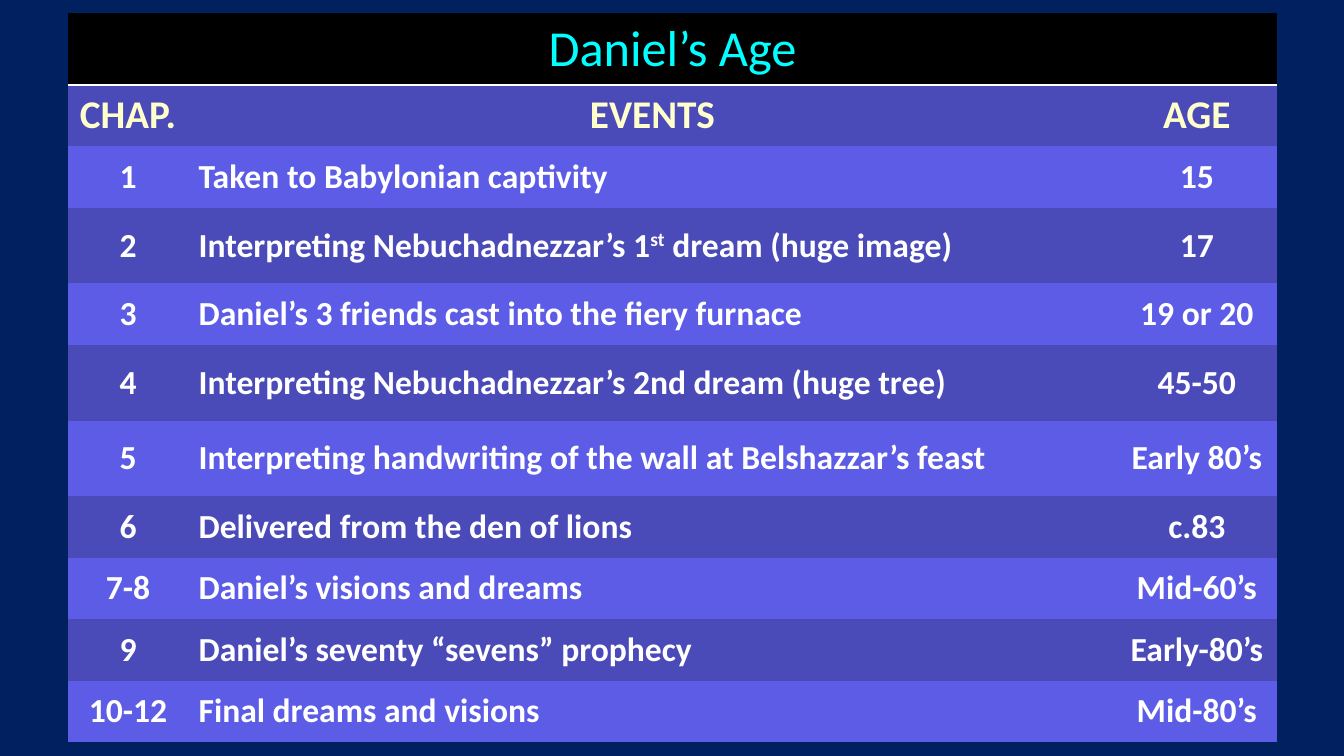
from pptx import Presentation
from pptx.dml.color import RGBColor as RGB
from pptx.enum.text import MSO_ANCHOR as ANCHOR, PP_ALIGN as ALIGN
from pptx.oxml import parse_xml
from pptx.oxml.ns import nsdecls
from pptx.util import Inches, Pt

COLORS = {
    "background": "002060", "title_fill": "000000", "title": "00FFFF",
    "dark": "4A4AB9", "light": "5C5CE7", "header": "FFFFCC", "white": "FFFFFF",
}
FONT = "Calibri"
NO_STYLE = "{2D5ABB26-0587-4C30-8999-92F81FD0307C}"
TITLE = "Daniel’s Age"
HEADER = ("CHAP.", "EVENTS", "AGE")
# An event is one string, or a tuple of runs whose odd items are superscript
EVENTS = [
    ("1", "Taken to Babylonian captivity", "15"),
    ("2", ("Interpreting Nebuchadnezzar’s 1", "st", " dream (huge image)"), "17"),
    ("3", "Daniel’s 3 friends cast into the fiery furnace", "19 or 20"),
    ("4", "Interpreting Nebuchadnezzar’s 2nd dream (huge tree)", "45-50"),
    ("5", "Interpreting handwriting of the wall at Belshazzar’s feast", "Early 80’s"),
    ("6", "Delivered from the den of lions", "c.83"),
    ("7-8", "Daniel’s visions and dreams", "Mid-60’s"),
    ("9", "Daniel’s seventy “sevens” prophecy", "Early-80’s"),
    ("10-12", "Final dreams and visions", "Mid-80’s"),
]
COL_WIDTHS = (1.2, 9.2, 1.6)
TITLE_HEIGHT, ROW_HEIGHT, TALL_HEIGHT = 0.68, 0.61, 0.75
TALL_CHAPTERS = ("2", "4", "5")


def fill_cell(cell, content, fill, color, size, bold=True, align=ALIGN.CENTER):
    cell.fill.solid()
    cell.fill.fore_color.rgb = RGB.from_string(COLORS[fill])
    cell.vertical_anchor = ANCHOR.MIDDLE
    p = cell.text_frame.paragraphs[0]
    p.alignment = align
    runs = (content,) if isinstance(content, str) else content
    for i, text in enumerate(runs):
        r = p.add_run()
        r.text = text
        r.font.name, r.font.size, r.font.bold = FONT, Pt(size), bold
        r.font.color.rgb = RGB.from_string(COLORS[color])
        if i % 2:
            r.font._element.set("baseline", "30000")


def underline_cell(cell, color, width):
    border = parse_xml(
        f'<a:lnB {nsdecls("a")} w="{Pt(width)}"><a:solidFill>'
        f'<a:srgbClr val="{COLORS[color]}"/></a:solidFill></a:lnB>')
    cell._tc.get_or_add_tcPr().insert(0, border)


def add_age_table(slide, left, top):
    heights = [TITLE_HEIGHT, ROW_HEIGHT] + [
        TALL_HEIGHT if chapter in TALL_CHAPTERS else ROW_HEIGHT
        for chapter, _, _ in EVENTS]
    table = slide.shapes.add_table(
        len(heights), len(COL_WIDTHS), Inches(left), Inches(top),
        Inches(sum(COL_WIDTHS)), Inches(sum(heights))).table
    table._tbl.tblPr[0].text = NO_STYLE
    for column, width in zip(table.columns, COL_WIDTHS):
        column.width = Inches(width)
    for row, height in zip(table.rows, heights):
        row.height = Inches(height)

    # Title across all columns
    title = table.cell(0, 0)
    title.merge(table.cell(0, len(COL_WIDTHS) - 1))
    fill_cell(title, TITLE, "title_fill", "title", 36, bold=False)
    title.vertical_anchor = ANCHOR.TOP
    for cell in table.rows[0].cells:
        underline_cell(cell, "white", 2)

    # Column headings
    for c, heading in enumerate(HEADER):
        fill_cell(table.cell(1, c), heading, "dark", "header", 28)

    # Events in alternating bands
    for i, event in enumerate(EVENTS):
        band = "dark" if i % 2 else "light"
        for c, content in enumerate(event):
            align = ALIGN.LEFT if c == 1 else ALIGN.CENTER
            fill_cell(table.cell(i + 2, c), content, band, "white", 24, align=align)


def main():
    prs = Presentation()
    prs.slide_width, prs.slide_height = Inches(13.33), Inches(7.5)
    s = prs.slides.add_slide(prs.slide_layouts[6])
    s.background.fill.solid()
    s.background.fill.fore_color.rgb = RGB.from_string(COLORS["background"])
    add_age_table(s, 0.67, 0.13)
    prs.save("out.pptx")


if __name__ == "__main__":
    main()
